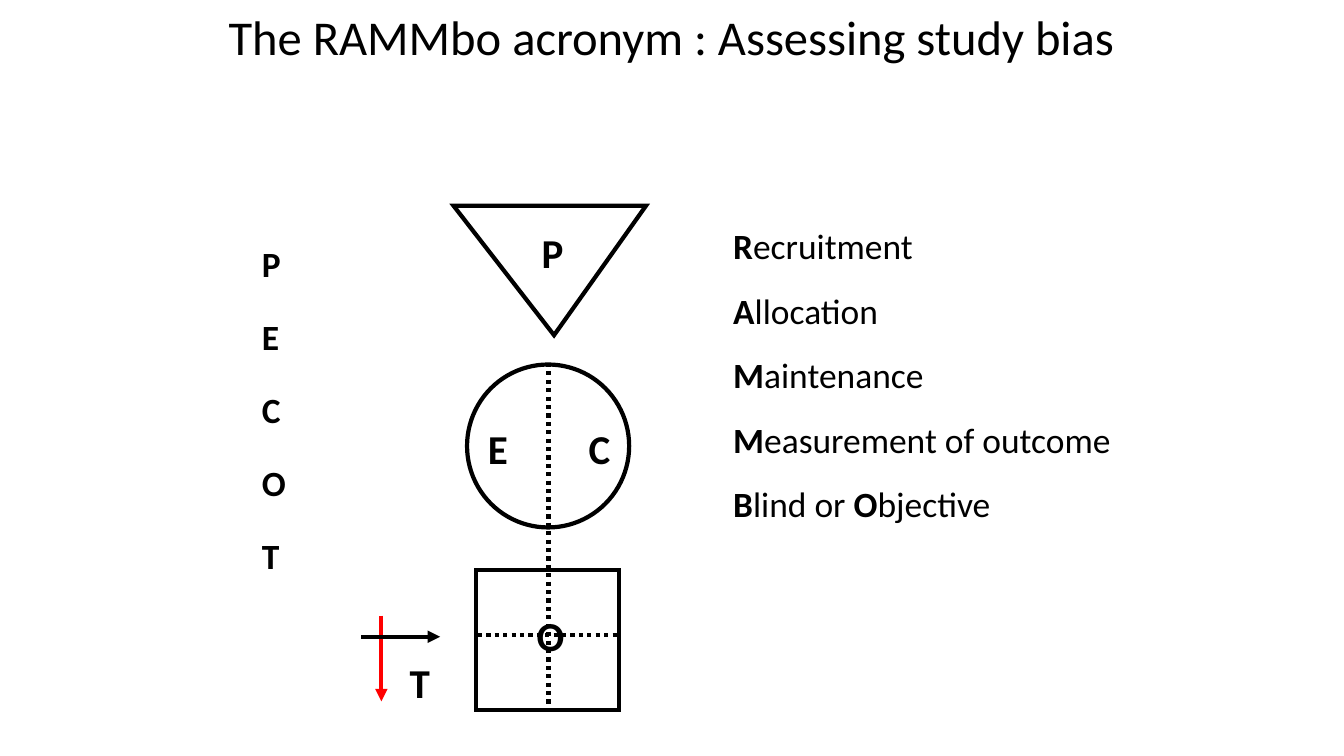
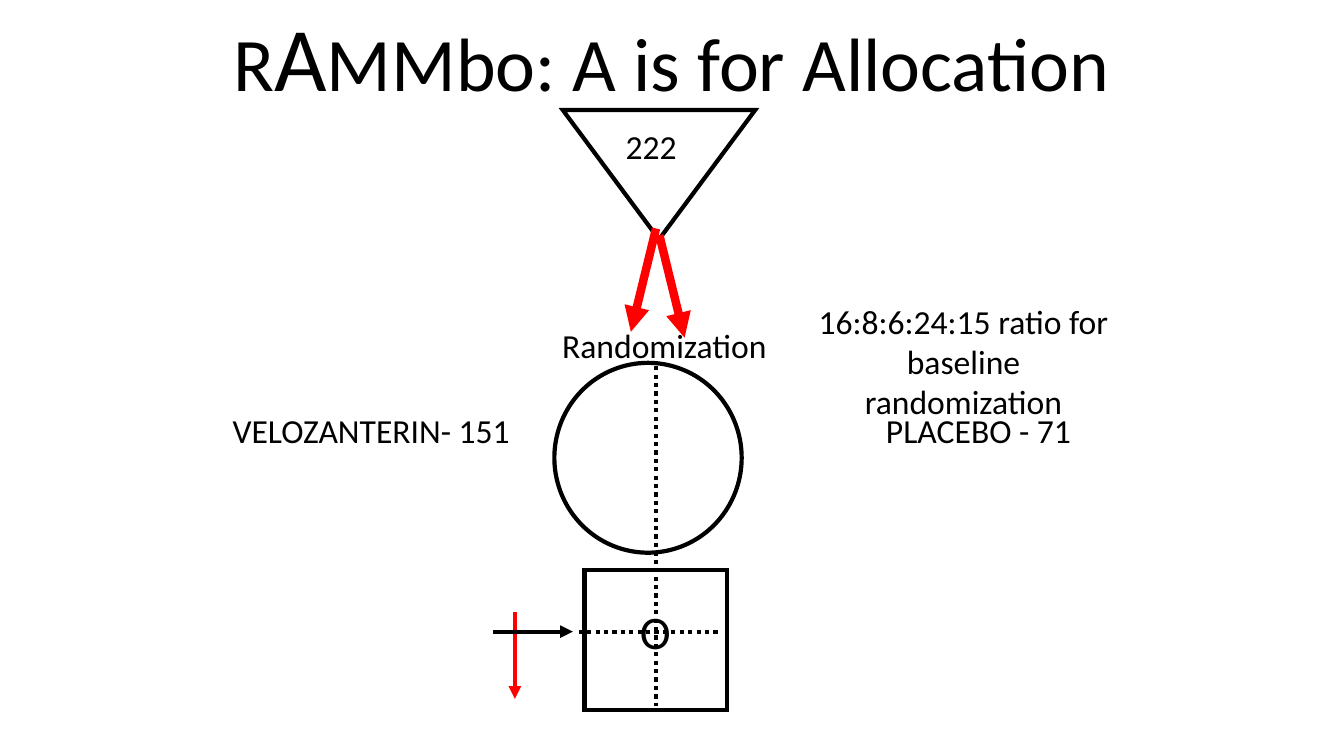
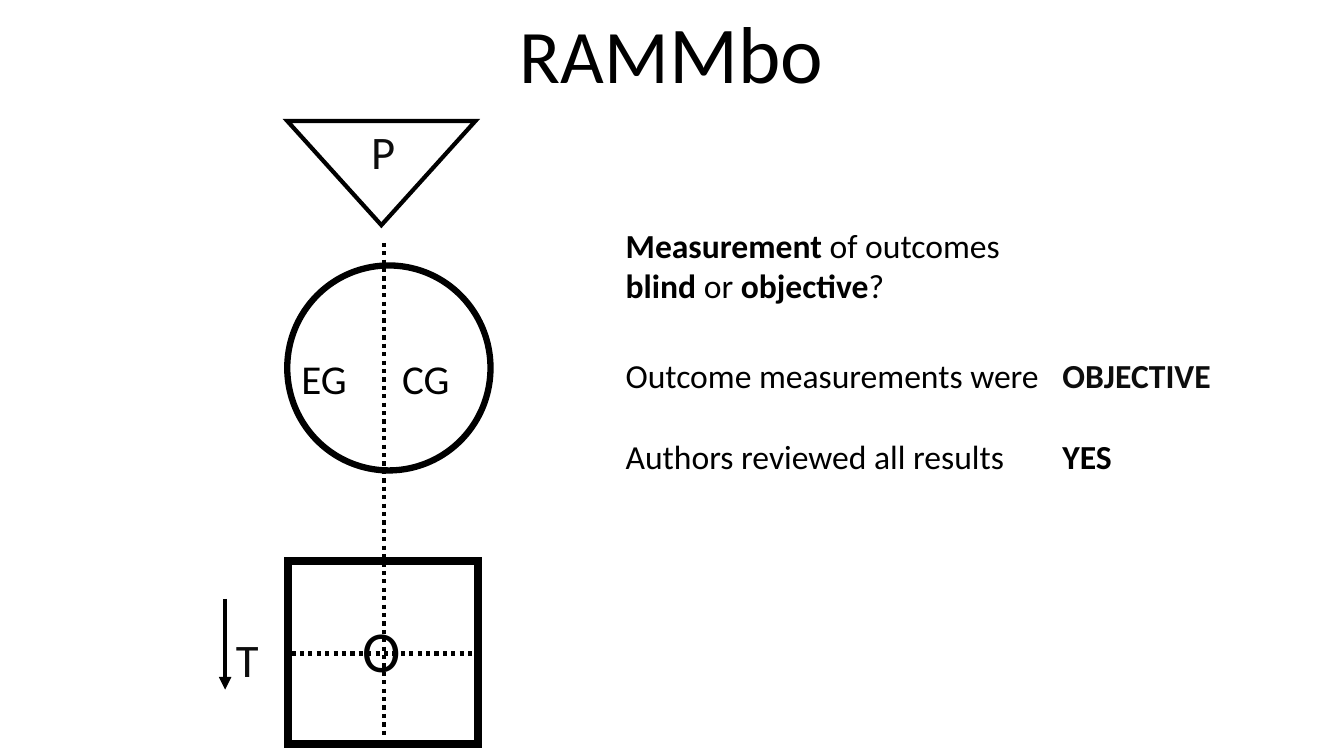
from dataclasses import dataclass, field
from typing import Any

from lxml import etree
from pptx import Presentation
from pptx.dml.color import RGBColor
from pptx.enum.dml import MSO_LINE
from pptx.enum.shapes import MSO_CONNECTOR, MSO_SHAPE
from pptx.enum.text import MSO_ANCHOR, MSO_AUTO_SIZE, PP_ALIGN
from pptx.oxml.ns import qn
from pptx.util import Inches, Length, Pt

TRIANGLE, CIRCLE, SQUARE = MSO_SHAPE.ISOSCELES_TRIANGLE, MSO_SHAPE.OVAL, MSO_SHAPE.RECTANGLE
STRAIGHT, DOTTED = MSO_CONNECTOR.STRAIGHT, MSO_LINE.ROUND_DOT
TOP, MIDDLE = MSO_ANCHOR.TOP, MSO_ANCHOR.MIDDLE
LEFT, CENTER = PP_ALIGN.LEFT, PP_ALIGN.CENTER

# The slide is a grid of 160 columns by 90 rows of square cells
COLUMNS, ROWS = 160, 90
CELL = Inches(7.5) / ROWS
FONT = "Calibri"
BLACK, SOFT_BLACK, RED = "000000", "0D0D0D", "FF0000"
TITLE_BOX = (12.7, 0, 134.5, 14.4)
TITLE_INSET = 1.6
TITLE_ONLY = 5
BOLD = {"bold": True}
Box = tuple[float, float, float, float]
Point = tuple[float, float]


@dataclass
class Outline:
    kind: Any
    box: Box
    weight: float = 3
    apex: float = 0.5


@dataclass
class Stroke:
    start: Point
    end: Point
    color: str = BLACK
    weight: float = 3
    dotted: bool = False


@dataclass
class Note:
    """Text in which parts between asterisks take the accent format."""
    box: Box
    lines: list[str]
    size: float = 24
    color: str = BLACK
    bold: bool = False
    accent: dict[str, Any] = field(default_factory=lambda: BOLD)
    align: Any = LEFT
    anchor: Any = TOP
    spacing: float = 1
    gap: float = 0


@dataclass
class Page:
    title: str
    title_size: float
    accent_size: float
    outlines: list[Outline]
    strokes: list[Stroke]
    notes: list[Note]


def cells(count: float) -> Length:
    return Length(round(count * CELL))


def rgb(color: str) -> RGBColor:
    return RGBColor.from_string(color)


def write_text(frame: Any, note: Note) -> None:
    frame.word_wrap = True
    frame.auto_size = MSO_AUTO_SIZE.NONE
    frame.vertical_anchor = note.anchor
    for index, line in enumerate(note.lines):
        paragraph = frame.paragraphs[0] if index == 0 else frame.add_paragraph()
        layout = {"alignment": note.align, "line_spacing": note.spacing,
                  "space_before": Pt(0), "space_after": Pt(note.gap)}
        for name, value in layout.items():
            setattr(paragraph, name, value)
        for position, part in enumerate(line.split("*")):
            if not part:
                continue
            style = {"name": FONT, "size": note.size, "color": note.color, "bold": note.bold}
            if position % 2:
                style |= note.accent
            run = paragraph.add_run()
            run.text = part
            run.font.color.rgb = rgb(style.pop("color"))
            style["size"] = Pt(style["size"])
            for name, value in style.items():
                setattr(run.font, name, value)


def draw_title(slide: Any, page: Page) -> None:
    title = slide.shapes.title
    for name, value in zip(("left", "top", "width", "height"), TITLE_BOX):
        setattr(title, name, cells(value))
    for side in ("left", "top", "right", "bottom"):
        setattr(title.text_frame, f"margin_{side}", cells(TITLE_INSET))
    write_text(title.text_frame, Note(TITLE_BOX, [page.title], page.title_size,
                                      accent={"size": page.accent_size},
                                      align=CENTER, spacing=0.9))


def draw_outline(slide: Any, outline: Outline) -> None:
    shape = slide.shapes.add_shape(outline.kind, *map(cells, outline.box))
    shape.shadow.inherit = False
    shape.fill.background()
    shape.line.color.rgb = rgb(BLACK)
    shape.line.width = Pt(outline.weight)
    # Sharp corners
    etree.SubElement(shape.element.spPr.find(qn("a:ln")), qn("a:miter"), lim="800000")
    if outline.kind == TRIANGLE:
        shape.rotation = 180
        shape.adjustments[0] = outline.apex


def draw_stroke(slide: Any, stroke: Stroke) -> None:
    """Draw a dotted divider, or else an arrow."""
    connector = slide.shapes.add_connector(STRAIGHT, *map(cells, stroke.start + stroke.end))
    connector.line.color.rgb = rgb(stroke.color)
    connector.line.width = Pt(stroke.weight)
    properties = connector.element.spPr
    if stroke.dotted:
        connector.line.dash_style = DOTTED
    else:
        etree.SubElement(properties.find(qn("a:ln")), qn("a:tailEnd"), type="triangle")
    etree.SubElement(properties, qn("a:effectLst"))


def draw_note(slide: Any, note: Note) -> None:
    text_box = slide.shapes.add_textbox(*map(cells, note.box))
    write_text(text_box.text_frame, note)


def dividers(axis: float, top: float, bottom: float,
             left: float, right: float, level: float) -> list[Stroke]:
    """The vertical group divider and the horizontal outcome divider."""
    return [Stroke((axis, top), (axis, bottom), dotted=True),
            Stroke((left, level), (right, level), dotted=True)]


def letter(text: str, left: float, top: float) -> Note:
    return Note((left, top, 6, 8.9), [text], 29.3, bold=True, anchor=MIDDLE)


PAGES = [
    # Overview of the acronym
    Page("The RAMMbo acronym : Assessing study bias", 34.7, 34.7,
         [Outline(TRIANGLE, (54, 24.5, 22.9, 15.4), apex=0.478),
          Outline(CIRCLE, (55.6, 43.4, 19.3, 19.4)),
          Outline(SQUARE, (56.7, 67.9, 17, 16.6))],
         [Stroke((45.4, 73.3), (45.4, 83.5), RED),
          Stroke((43, 75.8), (52.4, 75.8)),
          *dividers(65.3, 43.2, 84.1, 56.9, 73.6, 75.6)],
         [letter("P", 63.3, 25.6), letter("E", 56.9, 48.9), letter("C", 68.9, 48.9),
          letter("O", 62.7, 71.2), letter("T", 47.6, 76.7),
          Note((30, 26.7, 8.8, 44.8), list("PECOT"), 25.3, bold=True, spacing=1.3, gap=12.7),
          Note((86.1, 25.6, 52, 39.6),
               ["*R*ecruitment", "*A*llocation", "*M*aintenance",
                "*M*easurement of outcome", "*B*lind or *O*bjective"],
               25.3, spacing=1.1, gap=12.7)]),
    # Allocation
    Page("R*A*MMbo: A is for Allocation", 54, 64.8,
         [Outline(TRIANGLE, (67, 13.1, 22.9, 15.4)),
          Outline(CIRCLE, (66, 43.2, 22.3, 22.6)),
          Outline(SQUARE, (69.6, 67.9, 17, 16.6))],
         [Stroke((61.3, 72.8), (61.3, 83.2), RED),
          Stroke((58.7, 75.2), (68.2, 75.2)),
          *dividers(78.1, 43.6, 84, 68.9, 85.6, 75.2),
          Stroke((78.1, 27.2), (75.1, 39.5), RED, 6),
          Stroke((78.5, 28), (81.5, 40.2), RED, 6)],
         [Note((26.5, 48.2, 40, 6.1), ["VELOZANTERIN- 151"]),
          Note((104.3, 48.2, 36, 6.1), ["PLACEBO - 71"]),
          Note((75, 71.2, 6.2, 8), ["O"], 33.3),
          Note((73.3, 14.4, 10, 6.1), ["222"]),
          Note((23.6, 38.1, 111, 6.1), ["Randomization"], align=CENTER),
          Note((94.7, 35.2, 40, 10.9),
               ["16:8:6:24:15 ratio for baseline randomization"], align=CENTER)]),
    # Measurement
    Page("RAM*Mbo*", 54, 57.6,
         [Outline(TRIANGLE, (34.2, 14.4, 22.4, 12.4)),
          Outline(CIRCLE, (34.2, 31.6, 24.2, 24.4), 4.5),
          Outline(SQUARE, (34.3, 66.8, 22.6, 21.8), 6)],
         [Stroke((26.8, 71.3), (26.8, 82.1)),
          *dividers(45.7, 28.9, 87.7, 34.7, 56.6, 77.8)],
         [Note((34.7, 41.5, 10, 7.2), ["EG"], 29.3),
          Note((46.7, 41.5, 10, 7.2), ["CG"], 29.3),
          Note((42, 72.6, 7.1, 9.6), ["O"], 41.3),
          Note((26.9, 74.5, 5.3, 8), ["T"], 33.3, SOFT_BLACK),
          Note((43, 14, 5.4, 8), ["P"], 33.3, SOFT_BLACK),
          Note((73.3, 26.2, 73.3, 15.7),
               ["*Measurement *of outcomes", "*blind *or *objective*?"]),
          Note((73.3, 41.6, 54, 35.2),
               ["Outcome measurements were", "Authors reviewed all results"], gap=29.3),
          Note((125.3, 41.6, 25, 35.2), ["*OBJECTIVE*", "YES"], bold=True,
               accent={"color": SOFT_BLACK}, gap=29.3)]),
]


def main() -> None:
    presentation = Presentation()
    presentation.slide_width = cells(COLUMNS)
    presentation.slide_height = cells(ROWS)
    for page in PAGES:
        slide = presentation.slides.add_slide(presentation.slide_layouts[TITLE_ONLY])
        draw_title(slide, page)
        for outline in page.outlines:
            draw_outline(slide, outline)
        for stroke in page.strokes:
            draw_stroke(slide, stroke)
        for note in page.notes:
            draw_note(slide, note)
    presentation.save("out.pptx")


if __name__ == "__main__":
    main()
